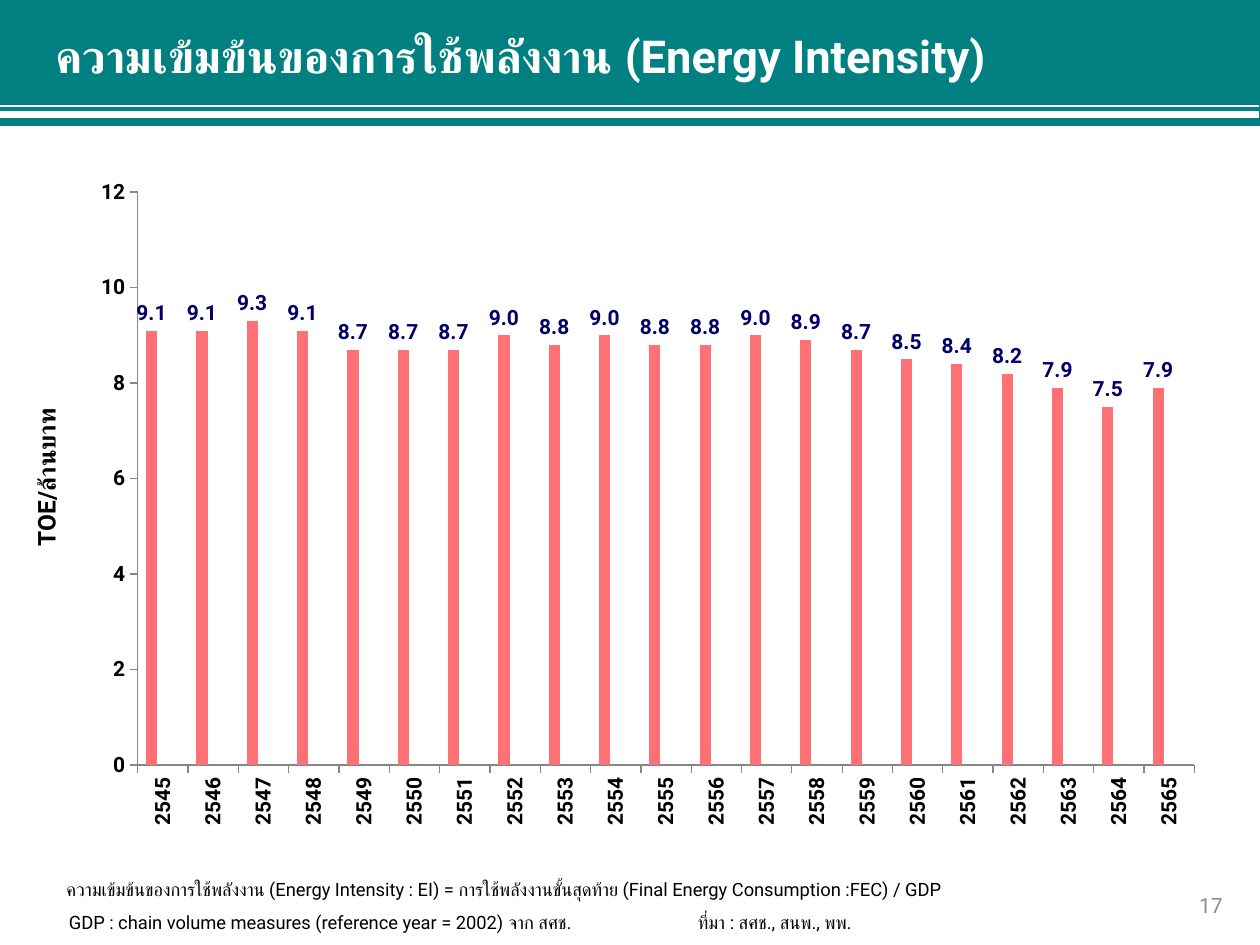
from lxml import etree
from pptx import Presentation
from pptx.chart.data import CategoryChartData
from pptx.dml.color import RGBColor
from pptx.enum.chart import XL_CHART_TYPE, XL_LABEL_POSITION, XL_TICK_MARK
from pptx.enum.shapes import MSO_CONNECTOR, MSO_SHAPE
from pptx.enum.text import MSO_ANCHOR, PP_ALIGN
from pptx.oxml.ns import qn
from pptx.util import Cm, Pt

COLUMN = XL_CHART_TYPE.COLUMN_CLUSTERED
ABOVE = XL_LABEL_POSITION.OUTSIDE_END
OUT = XL_TICK_MARK.OUTSIDE
STRAIGHT = MSO_CONNECTOR.STRAIGHT
RECT = MSO_SHAPE.RECTANGLE
MIDDLE, TOP = MSO_ANCHOR.MIDDLE, MSO_ANCHOR.TOP
LEFT, CENTER, RIGHT = PP_ALIGN.LEFT, PP_ALIGN.CENTER, PP_ALIGN.RIGHT

COLORS = {
    "teal": "008080", "white": "FFFFFF", "black": "000000", "gray": "8C8C8C",
    "axis": "868686", "navy": "000066", "coral": "FF7174", "red": "C0504D",
    "green": "9BBB59",
}
FONT = "Roboto"
YEARS = [str(year) for year in range(2545, 2566)]
RATIOS = [9.1, 9.1, 9.3, 9.1, 8.7, 8.7, 8.7, 9, 8.8, 9, 8.8,
          8.8, 9, 8.9, 8.7, 8.5, 8.4, 8.2, 7.9, 7.5, 7.9]
SERIES = [("Series 1", RATIOS, "coral"),
          ("Series 2", [None] * len(YEARS), "red"),
          ("Series 3", [None] * len(YEARS), "green")]
PLOT = {"x": 0.05, "y": 0.04, "w": 0.93, "h": 0.85}


class Deck:
    def __init__(self):
        self.prs = Presentation()
        self.prs.slide_width, self.prs.slide_height = Cm(25.4), Cm(19.05)
        self.slide = self.prs.slides.add_slide(self.prs.slide_layouts[5])
        self.shapes = self.slide.shapes

    def color(self, name):
        return RGBColor.from_string(COLORS[name])

    def style(self, font, size, color="black", bold=False):
        font.name, font.size, font.bold = FONT, Pt(size), bold
        font.color.rgb = self.color(color)

    def fill_text(self, shape, text, size, color="black", bold=False,
                  align=LEFT, anchor=TOP):
        frame = shape.text_frame
        frame.word_wrap = True
        frame.vertical_anchor = anchor
        frame.text = text
        para = frame.paragraphs[0]
        para.alignment = align
        self.style(para.font, size, color, bold)

    def title(self, text, box, size):
        shape = self.shapes.title
        shape.left, shape.top, shape.width, shape.height = map(Cm, box)
        self.fill_text(shape, text, size, "white", True, anchor=MIDDLE)
        shape.element.getparent().append(shape.element)

    def text(self, text, box, size, turn=0, **look):
        shape = self.shapes.add_textbox(*map(Cm, box))
        shape.rotation = turn
        self.fill_text(shape, text, size, **look)

    def band(self, box, color):
        shape = self.shapes.add_shape(RECT, *map(Cm, box))
        shape.shadow.inherit = False
        shape.fill.solid()
        shape.fill.fore_color.rgb = self.color(color)
        shape.line.fill.background()

    def rule(self, left, right, y, width, color):
        line = self.shapes.add_connector(
            STRAIGHT, Cm(left), Cm(y), Cm(right), Cm(y))
        line.line.width = Pt(width)
        line.line.color.rgb = self.color(color)
        etree.SubElement(line.element.spPr, qn("a:effectLst"))

    def axis(self, axis):
        axis.has_major_gridlines = False
        axis.major_tick_mark = OUT
        axis.format.line.color.rgb = self.color("axis")
        axis.format.line.width = Pt(0.75)
        self.style(axis.tick_labels.font, 12, bold=True)

    def place(self, chart):
        area = chart.element.find(".//" + qn("c:plotArea"))
        layout = area.find(qn("c:layout"))
        if layout is None:
            layout = etree.Element(qn("c:layout"))
            area.insert(0, layout)
        inner = etree.SubElement(layout, qn("c:manualLayout"))
        parts = [("layoutTarget", "inner"), ("xMode", "edge"),
                 ("yMode", "edge"), *PLOT.items()]
        for name, value in parts:
            etree.SubElement(inner, qn("c:" + name), val=str(value))

    def chart(self, box):
        data = CategoryChartData()
        data.categories = YEARS
        for name, values, _ in SERIES:
            data.add_series(name, values)
        chart = self.shapes.add_chart(COLUMN, *map(Cm, box), data).chart
        chart.has_legend = chart.has_title = False
        chart.font.name, chart.font.size = "Calibri", Pt(18)
        chart.font.color.rgb = self.color("black")
        plot = chart.plots[0]
        plot.vary_by_categories = False
        plot.gap_width, plot.overlap = 150, 0
        for series, (_, _, color) in zip(plot.series, SERIES):
            series.format.fill.solid()
            series.format.fill.fore_color.rgb = self.color(color)
        labels = plot.series[0].data_labels
        labels.show_value = True
        labels.position = ABOVE
        labels.number_format = "#,##0.0"
        labels.number_format_is_linked = False
        self.style(labels.font, 12, "navy", True)
        years, scale = chart.category_axis, chart.value_axis
        self.axis(years)
        self.axis(scale)
        body = chart.element.find(
            ".//" + qn("c:catAx") + "/" + qn("c:txPr") + "/" + qn("a:bodyPr"))
        body.set("rot", "-5400000")
        body.set("vert", "horz")
        scale.minimum_scale, scale.maximum_scale = 0, 12
        scale.major_unit = 2
        scale.tick_labels.number_format = "#,##0"
        scale.tick_labels.number_format_is_linked = False
        self.place(chart)


def main():
    deck = Deck()
    deck.band((-0.08, -0.1, 25.48, 2.64), "teal")
    for y, width in ((2.31, 3.75), (2.13, 1.25)):
        deck.rule(-0.08, 25.37, y, width, "white")
    deck.title("ความเข้มข้นของการใช้พลังงาน (Energy Intensity)",
               (0.86, 0.05, 23.5, 2.13), 25.9)
    deck.text("TOE/ล้านบาท", (-4.17, 9.19, 10.21, 0.86), 14, turn=270,
              bold=True, align=CENTER)
    notes = [
        ("ความเข้มข้นของการใช้พลังงาน (Energy Intensity : EI) = "
         "การใช้พลังงานขั้นสุดท้าย (Final Energy Consumption :FEC) / GDP",
         (1.09, 17.58, 23.01, 0.71)),
        ("ที่มา : สศช., สนพ., พพ.", (13.82, 18.24, 5.28, 0.71)),
        ("GDP : chain volume measures (reference year = 2002) จาก สศช.",
         (1.14, 18.24, 12.7, 0.71)),
    ]
    for text, box in notes:
        deck.text(text, box, 10.5)
    deck.text("17", (23.55, 17.78, 1.35, 0.94), 12, color="gray",
              align=RIGHT, anchor=MIDDLE)
    deck.chart((1.63, 3.33, 22.91, 13.59))
    deck.prs.save("out.pptx")


if __name__ == "__main__":
    main()
